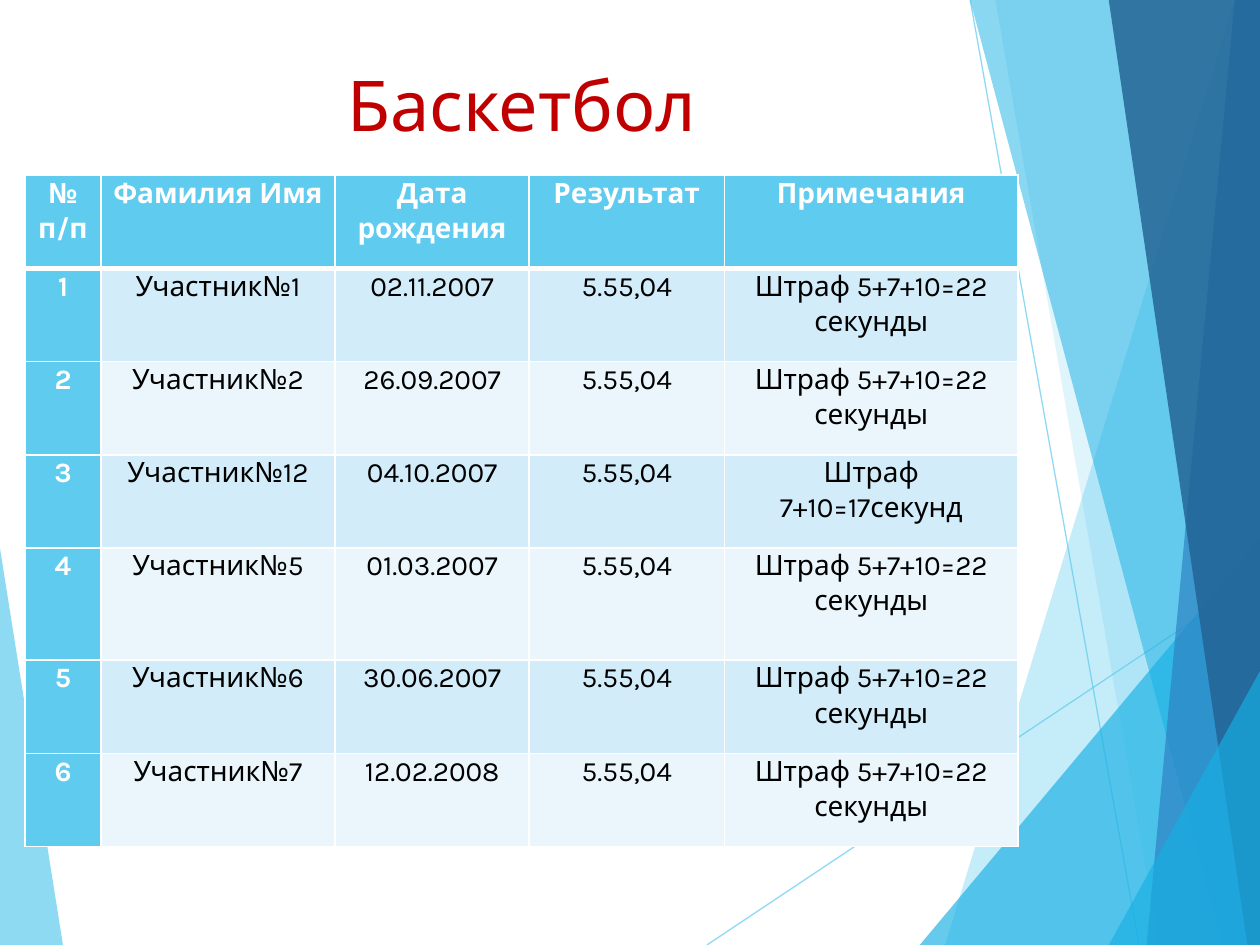
from dataclasses import dataclass
from typing import NamedTuple

from lxml.etree import SubElement
from pptx import Presentation
from pptx.dml.color import RGBColor
from pptx.enum.shapes import MSO_CONNECTOR as Connector
from pptx.enum.text import MSO_ANCHOR as Anchor, PP_ALIGN as Align
from pptx.oxml import parse_xml
from pptx.oxml.ns import nsdecls, qn
from pptx.util import Emu, Inches, Pt

Point = tuple[float, float]


@dataclass(frozen=True)
class Theme:
    font: str = "Karla"
    title_size: float = 40
    table_size: float = 16
    title: str = "C00000"
    sky: str = "5FCBEF"
    cyan: str = "17B0E4"
    blue: str = "2E83C3"
    navy: str = "226292"
    dark_band: str = "D2ECF9"
    light_band: str = "EAF6FC"
    white: str = "FFFFFF"
    black: str = "000000"


class Facet(NamedTuple):
    color: str
    opacity: int
    corners: list[Point]


class Ray(NamedTuple):
    start: Point
    end: Point


class Participant(NamedTuple):
    name: str
    born: str
    penalty: str = "Штраф 5+7+10=22 секунды"
    result: str = "5.55,04"


THEME = Theme()
WIDTH, HEIGHT = Inches(10), Inches(7.5)

# Corners are percentages of the slide's width and height
LEFT_FACET = Facet(THEME.sky, 70, [(-0.1, 58.5), (4.9, 100.1), (-0.1, 100)])
RAYS = [Ray((56.1, 100), (100.1, 60.9)), Ray((77, 0), (90.4, 100))]
RIGHT_FACETS = [
    Facet(THEME.sky, 36, [(97.5, 0), (75.4, 100), (100.2, 100.1), (100.1, 0.1)]),
    Facet(THEME.sky, 20, [(78.8, -0.1), (91.9, 100), (100.1, 100), (100.1, -0.1)]),
    Facet(THEME.cyan, 66, [(72.6, 100), (100, 57.2), (100.1, 100)]),
    Facet(THEME.cyan, 50, [(76.7, -0.1), (97, 100), (100.1, 99.9), (100.1, -0.1)]),
    Facet(THEME.blue, 70, [(98.1, -0.1), (90.7, 100), (100.1, 100), (100, -0.1)]),
    Facet(THEME.navy, 82, [(88.5, -0.1), (98.8, 100), (100.2, 100), (100, -0.1)]),
    Facet(THEME.cyan, 66, [(88.2, 100), (100.2, 71.3), (100.2, 99.9)]),
]

HEADINGS = ["№ п/п", "Фамилия Имя", "Дата рождения", "Результат", "Примечания"]
PARTICIPANTS = [
    Participant("Участник№1", "02.11.2007"),
    Participant("Участник№2", "26.09.2007"),
    Participant("Участник№12", "04.10.2007", "Штраф 7+10=17секунд"),
    Participant("Участник№5", "01.03.2007"),
    Participant("Участник№6", "30.06.2007"),
    Participant("Участник№7", "12.02.2008"),
]
COLUMN_SHARES = [6, 18.6, 15.4, 15.5, 23.3]
ROW_HEIGHT, TALL_ROW_HEIGHT, TALL_ROW = 0.74, 0.89, 4


def across(share: float) -> Emu:
    return Emu(round(WIDTH * share / 100))


def down(share: float) -> Emu:
    return Emu(round(HEIGHT * share / 100))


def set_opacity(shape, percent: int) -> None:
    for color in shape.element.spPr.iter(qn("a:srgbClr")):
        SubElement(color, qn("a:alpha")).set("val", str(percent * 1000))


def write(frame, text: str, *, size: float, color: str, bold: bool = False,
          line_spacing: float = 1, space_after: float = 0) -> None:
    frame.word_wrap = True
    paragraph = frame.paragraphs[0]
    paragraph.alignment = Align.CENTER
    paragraph.line_spacing = line_spacing
    paragraph.space_after = Pt(space_after)
    run = paragraph.add_run()
    run.text = text
    run.font.name, run.font.size, run.font.bold = THEME.font, Pt(size), bold
    run.font.color.rgb = RGBColor.from_string(color)


def draw_facet(slide, facet: Facet) -> None:
    first, *others = facet.corners
    builder = slide.shapes.build_freeform(*first, scale=(WIDTH / 100, HEIGHT / 100))
    builder.add_line_segments(others, close=True)
    shape = builder.convert_to_shape()
    shape.shadow.inherit = False
    shape.line.fill.background()
    shape.fill.solid()
    shape.fill.fore_color.rgb = RGBColor.from_string(facet.color)
    set_opacity(shape, facet.opacity)


def draw_ray(slide, ray: Ray) -> None:
    (x1, y1), (x2, y2) = ray
    line = slide.shapes.add_connector(
        Connector.STRAIGHT, across(x1), down(y1), across(x2), down(y2))
    line.line.width = Pt(0.75)
    line.line.color.rgb = RGBColor.from_string(THEME.sky)
    set_opacity(line, 70)
    SubElement(line.element.spPr, qn("a:effectLst"))


def set_borders(cell, **widths: float) -> None:
    properties = cell._tc.get_or_add_tcPr()
    for index, side in enumerate("LRTB"):
        width = Pt(widths.get(side, 1))
        properties.insert(index, parse_xml(
            f'<a:ln{side} {nsdecls("a")} w="{width}"><a:solidFill>'
            f'<a:srgbClr val="{THEME.white}"/></a:solidFill></a:ln{side}>'))


def fill_cell(cell, text: str, row: int, column: int) -> None:
    heading = row == 0 or column == 0
    band = THEME.dark_band if row % 2 else THEME.light_band
    cell.fill.solid()
    cell.fill.fore_color.rgb = RGBColor.from_string(THEME.sky if heading else band)
    cell.margin_left = cell.margin_right = Inches(0.07)
    cell.margin_top = cell.margin_bottom = 0
    set_borders(cell, T=3 if row == 1 else 1, B=3 if row == 0 else 1)
    write(cell.text_frame, text, size=THEME.table_size, bold=heading,
          color=THEME.white if heading else THEME.black,
          line_spacing=1.07, space_after=8)


def draw_results(slide) -> None:
    rows = [HEADINGS] + [
        [str(place), person.name, person.born, person.result, person.penalty]
        for place, person in enumerate(PARTICIPANTS, start=1)]
    heights = [TALL_ROW_HEIGHT if row == TALL_ROW else ROW_HEIGHT
               for row in range(len(rows))]
    results = slide.shapes.add_table(
        len(rows), len(HEADINGS), across(2), Inches(1.39),
        across(sum(COLUMN_SHARES)), Inches(sum(heights))).table
    for column, share in zip(results.columns, COLUMN_SHARES):
        column.width = across(share)
    for row, (height, texts) in enumerate(zip(heights, rows)):
        results.rows[row].height = Inches(height)
        for column, text in enumerate(texts):
            fill_cell(results.cell(row, column), text, row, column)


def main() -> None:
    deck = Presentation()
    deck.slide_width, deck.slide_height = WIDTH, HEIGHT
    slide = deck.slides.add_slide(deck.slide_layouts[6])

    # Faceted backdrop
    draw_facet(slide, LEFT_FACET)
    for ray in RAYS:
        draw_ray(slide, ray)
    for facet in RIGHT_FACETS:
        draw_facet(slide, facet)

    # Title
    sport = slide.shapes.add_textbox(across(6.7), down(5.9), across(69.4), down(22.3))
    sport.text_frame.vertical_anchor = Anchor.TOP
    write(sport.text_frame, "Баскетбол", size=THEME.title_size, color=THEME.title)

    # Results table
    draw_results(slide)
    deck.save("out.pptx")


if __name__ == "__main__":
    main()
